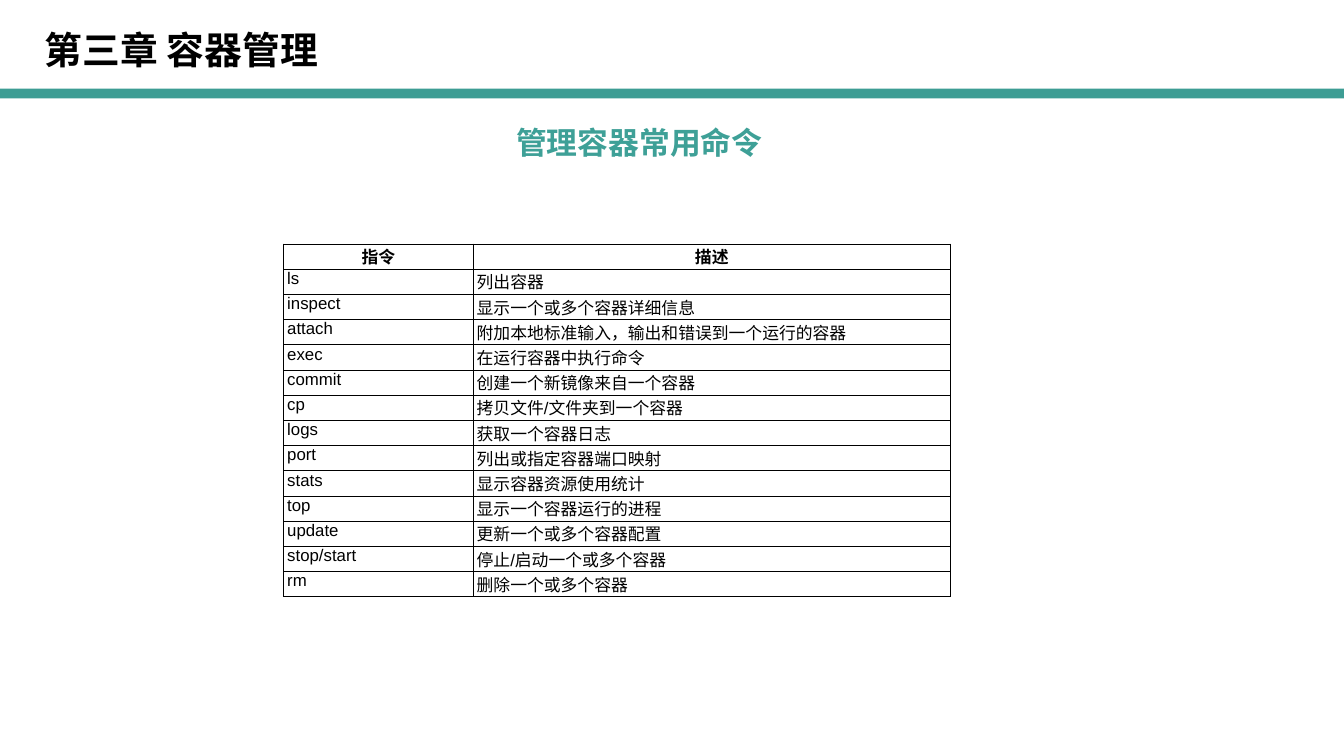
from lxml.etree import SubElement
from pptx import Presentation
from pptx.dml.color import RGBColor
from pptx.enum.shapes import MSO_SHAPE
from pptx.enum.text import MSO_ANCHOR, MSO_AUTO_SIZE, PP_ALIGN
from pptx.oxml.ns import qn
from pptx.util import Emu, Pt

PX = 9144  # 100 px to the inch
CJK_FONT = "Noto Sans CJK SC"


def color(hex_string):
    return RGBColor.from_string(hex_string)


def write(frame, text, size, font, hex_color, bold, align):
    paragraph = frame.paragraphs[0]
    paragraph.alignment = align
    run = paragraph.add_run()
    run.text = text
    run.font.size = Pt(size)
    run.font.name = font
    run.font.bold = bold
    run.font.color.rgb = color(hex_color)
    SubElement(run.font._element, qn("a:ea"), typeface=CJK_FONT)


presentation = Presentation()
presentation.slide_width = Emu(2667 * PX)
presentation.slide_height = Emu(1500 * PX)
slide = presentation.slides.add_slide(presentation.slide_layouts[5])

# Rule below the chapter title
rule = slide.shapes.add_shape(MSO_SHAPE.RECTANGLE, 0, 176 * PX, 2667 * PX, 19 * PX)
rule.shadow.inherit = False
rule.fill.solid()
rule.fill.fore_color.rgb = color("3D9D94")
rule.line.fill.background()

# Chapter title and section heading
title = slide.shapes.title
title.left, title.top, title.width, title.height = [Emu(n * PX) for n in (79, 47, 573, 101)]
heading = slide.shapes.add_textbox(1012 * PX, 241 * PX, 514 * PX, 84 * PX)
for shape, text, size, hex_color, align in [
    (title, "第三章 容器管理", 54, "000000", PP_ALIGN.LEFT),
    (heading, "管理容器常用命令", 44, "3EA097", PP_ALIGN.CENTER),
]:
    frame = shape.text_frame
    frame.word_wrap = False
    frame.auto_size = MSO_AUTO_SIZE.NONE
    frame.vertical_anchor = MSO_ANCHOR.MIDDLE
    write(frame, text, size, CJK_FONT, hex_color, True, align)

# Command table
commands = [
    ("指令", "描述"),
    ("ls", "列出容器"),
    ("inspect", "显示一个或多个容器详细信息"),
    ("attach", "附加本地标准输入，输出和错误到一个运行的容器"),
    ("exec", "在运行容器中执行命令"),
    ("commit", "创建一个新镜像来自一个容器"),
    ("cp", "拷贝文件/文件夹到一个容器"),
    ("logs", "获取一个容器日志"),
    ("port", "列出或指定容器端口映射"),
    ("stats", "显示容器资源使用统计"),
    ("top", "显示一个容器运行的进程"),
    ("update", "更新一个或多个容器配置"),
    ("stop/start", "停止/启动一个或多个容器"),
    ("rm", "删除一个或多个容器"),
]
table = slide.shapes.add_table(
    len(commands), 2, 563 * PX, 484 * PX, 1323 * PX, 50 * len(commands) * PX
).table
table.horz_banding = False
table.first_row = False
table.columns[0].width = Emu(376 * PX)
table.columns[1].width = Emu(947 * PX)

for row, texts in enumerate(commands):
    table.rows[row].height = Emu(50 * PX)
    header = row == 0
    for column, text in enumerate(texts):
        cell = table.cell(row, column)
        cell.margin_left = cell.margin_right = Emu(7 * PX)
        cell.margin_top = cell.margin_bottom = Emu(PX // 2)
        cell.vertical_anchor = MSO_ANCHOR.TOP
        write(cell.text_frame, text, 24, "Arial", "000000", header,
              PP_ALIGN.CENTER if header else PP_ALIGN.LEFT)
        # Borders come before the fill in the cell properties
        properties = cell._tc.get_or_add_tcPr()
        for side in ("a:lnL", "a:lnR", "a:lnT", "a:lnB"):
            border = SubElement(properties, qn(side), w=str(Pt(1)))
            fill = SubElement(border, qn("a:solidFill"))
            SubElement(fill, qn("a:srgbClr"), val="000000")
        cell.fill.solid()
        cell.fill.fore_color.rgb = color("FFFFFF")

presentation.save("out.pptx")
